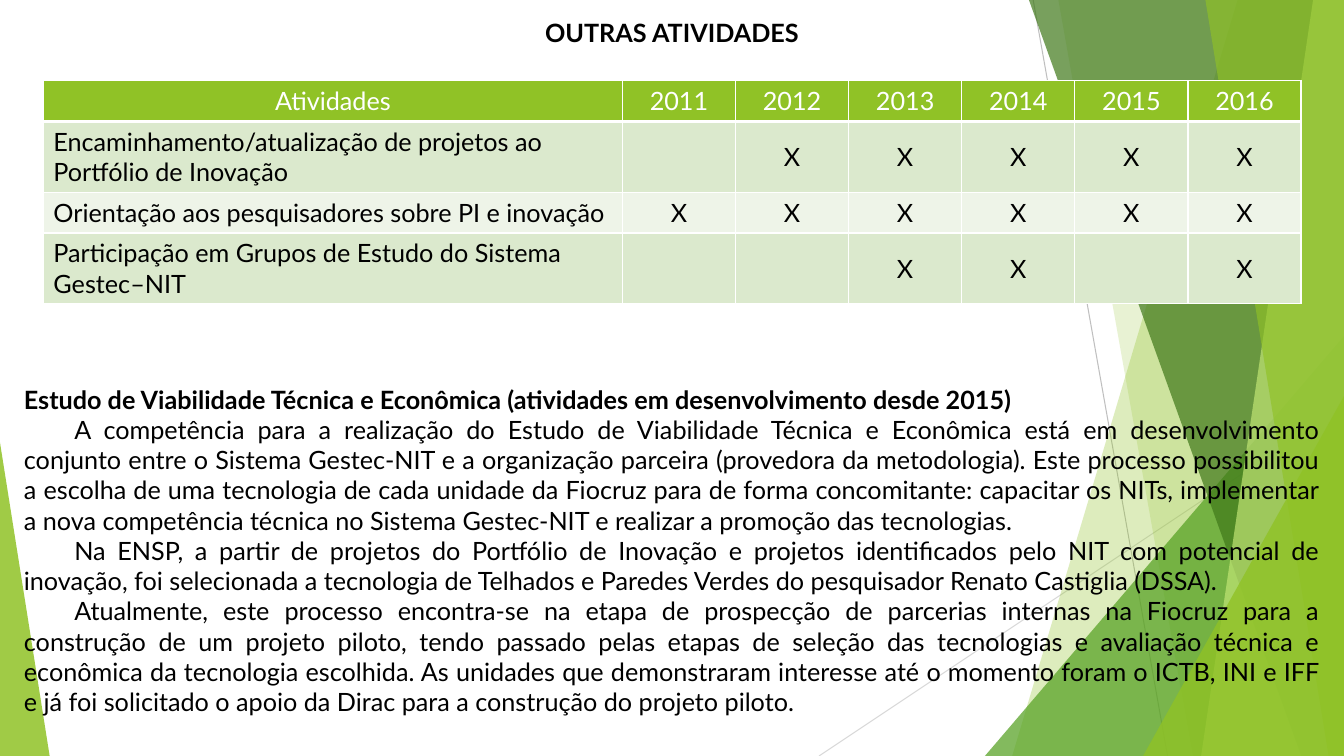
import pptx
import pptx.util
import pptx.dml.color
import pptx.enum.shapes
import pptx.enum.text
import pptx.oxml
import pptx.oxml.ns

Pt = pptx.util.Pt
SHAPE = pptx.enum.shapes.MSO_SHAPE
ALIGN = pptx.enum.text.PP_ALIGN
ANCHOR = pptx.enum.text.MSO_ANCHOR

COLORS = {
    "black": "000000", "white": "FFFFFF", "gray": "BFBFBF", "pale_gray": "D9D9D9",
    "green": "90C226", "leaf": "54A021", "forest": "3F7819", "lime": "C0E474",
    "band_dark": "DBE9CD", "band_light": "EEF4E8",
}
WIDTH, HEIGHT = 960, 540

TITLE = "OUTRAS ATIVIDADES"
YEARS = [2011, 2012, 2013, 2014, 2015, 2016]
ACTIVITIES = [
    ("Encaminhamento/atualização de projetos ao Portfólio de Inovação",
     {2012, 2013, 2014, 2015, 2016}, 50.4),
    ("Orientação aos pesquisadores sobre PI e inovação", set(YEARS), 29.2),
    ("Participação em Grupos de Estudo do Sistema Gestec–NIT",
     {2013, 2014, 2016}, 50.4),
]
STUDY_HEADING = "Estudo de Viabilidade Técnica e Econômica (atividades em desenvolvimento desde 2015)"
STUDY = [
    "A competência para a realização do Estudo de Viabilidade Técnica e Econômica está em desenvolvimento conjunto entre o Sistema Gestec-NIT e a organização parceira (provedora da metodologia). Este processo possibilitou a escolha de uma tecnologia de cada unidade da Fiocruz para de forma concomitante: capacitar os NITs, implementar a nova competência técnica no Sistema Gestec-NIT e realizar a promoção das tecnologias.",
    "Na ENSP, a partir de projetos do Portfólio de Inovação e projetos identificados pelo NIT com potencial de inovação, foi selecionada a tecnologia de Telhados e Paredes Verdes do pesquisador Renato Castiglia (DSSA).",
    "Atualmente, este processo encontra-se na etapa de prospecção de parcerias internas na Fiocruz para a construção de um projeto piloto, tendo passado pelas etapas de seleção das tecnologias e avaliação técnica e econômica da tecnologia escolhida. As unidades que demonstraram interesse até o momento foram o ICTB, INI e IFF e já foi solicitado o apoio da Dirac para a construção do projeto piloto.",
]

RAYS = [((738, 0), (834, HEIGHT), "gray"), ((WIDTH, 290), (585, HEIGHT), "pale_gray")]
FACETS = [
    ("band", (884, 723), "green", 30),
    ("band", (756, 852), "green", 20),
    ("triangle", (703.5, 240, 256.5, 1), "leaf", 72),
    ("band", (735, 929.5), "forest", 70),
    ("band", (938, 858), "lime", 70),
    ("band", (861, 949), "green", 65),
    ("triangle", (816.5, 283, 143.5, 1), "green", 80),
    ("triangle", (0, 316, 35.5, 0), "green", 85),
]
FONT = {"name": "Lato", "size": Pt(18), "bold": False}


def rgb(name):
    return pptx.dml.color.RGBColor.from_string(COLORS[name])


def element(xml):
    return pptx.oxml.parse_xml(xml.replace(" ", f' {pptx.oxml.ns.nsdecls("a")} ', 1))


def write(p, text, color="black", align=ALIGN.LEFT, **changes):
    p.alignment = align
    r = p.add_run()
    r.text = text
    for key, value in {**FONT, **changes}.items():
        setattr(r.font, key, value)
    r.font.color.rgb = rgb(color)


def add_ray(s, start, end, color):
    line = s.shapes.add_connector(pptx.enum.shapes.MSO_CONNECTOR.STRAIGHT,
                                  *map(Pt, start + end))
    line.line.color.rgb = rgb(color)
    line.line.width = Pt(0.75)
    line._element.spPr.append(element("<a:effectLst />"))


def add_facet(s, kind, geometry, color, opacity):
    if kind == "band":
        top, bottom = geometry
        builder = s.shapes.build_freeform(Pt(top), 0)
        builder.add_line_segments([(Pt(WIDTH), 0), (Pt(WIDTH), Pt(HEIGHT)),
                                   (Pt(bottom), Pt(HEIGHT))], close=True)
        sp = builder.convert_to_shape()
    else:
        left, top, width, apex = geometry
        sp = s.shapes.add_shape(SHAPE.ISOSCELES_TRIANGLE, Pt(left), Pt(top),
                                Pt(width), Pt(HEIGHT - top))
        sp.adjustments[0] = apex
    sp.shadow.inherit = False
    sp.line.fill.background()
    sp.fill.solid()
    sp.fill.fore_color.rgb = rgb(color)
    fill = sp._element.spPr.find(pptx.oxml.ns.qn("a:solidFill"))
    fill[0].append(element(f'<a:alpha val="{opacity * 1000}"/>'))


def fill_cell(cell, text, fill, color, centered, bottom=1):
    tcPr = cell._tc.get_or_add_tcPr()
    for side, width in {"L": 1, "R": 1, "T": 1, "B": bottom}.items():
        tcPr.append(element(
            f'<a:ln{side} w="{Pt(width)}"><a:solidFill><a:srgbClr '
            f'val="{COLORS["white"]}"/></a:solidFill></a:ln{side}>'))
    cell.fill.solid()
    cell.fill.fore_color.rgb = rgb(fill)
    cell.vertical_anchor = ANCHOR.MIDDLE
    if text:
        write(cell.text_frame.paragraphs[0], text, color,
              ALIGN.CENTER if centered else ALIGN.LEFT)


def add_activities(s):
    heights = [29.2] + [height for _, _, height in ACTIVITIES]
    widths = [413.6] + [80.8] * len(YEARS)
    table = s.shapes.add_table(len(heights), len(widths), Pt(31), Pt(57.6),
                               Pt(sum(widths)), Pt(sum(heights))).table
    table.first_row = table.horz_banding = False
    for column, width in zip(table.columns, widths):
        column.width = Pt(width)
    for row, height in zip(table.rows, heights):
        row.height = Pt(height)
    for j, text in enumerate(["Atividades", *map(str, YEARS)]):
        fill_cell(table.cell(0, j), text, "green", "white", True, 3)
    for i, (name, active, _) in enumerate(ACTIVITIES, 1):
        band = "band_dark" if i % 2 else "band_light"
        marks = ["X" if year in active else "" for year in YEARS]
        for j, text in enumerate([name, *marks]):
            fill_cell(table.cell(i, j), text, band, "black", j > 0)


def add_text(s, left, top, width, height):
    tf = s.shapes.add_textbox(*map(Pt, (left, top, width, height))).text_frame
    tf.word_wrap = True
    return tf


def main():
    prs = pptx.Presentation()
    prs.slide_width, prs.slide_height = Pt(WIDTH), Pt(HEIGHT)
    s = prs.slides.add_slide(prs.slide_layouts[6])
    for ray in RAYS:
        add_ray(s, *ray)
    for facet in FACETS:
        add_facet(s, *facet)
    add_activities(s)

    tf = add_text(s, 66, 8.6, 828, 104.4)
    write(tf.paragraphs[0], TITLE, align=ALIGN.CENTER, bold=True)

    tf = add_text(s, 10, 270.7, 939.6, 247)
    write(tf.paragraphs[0], STUDY_HEADING, align=ALIGN.JUSTIFY, bold=True)
    for text in STUDY:
        p = tf.add_paragraph()
        p._p.get_or_add_pPr().set("indent", str(Pt(36)))
        write(p, text, align=ALIGN.JUSTIFY)
    prs.save("out.pptx")


if __name__ == "__main__":
    main()
